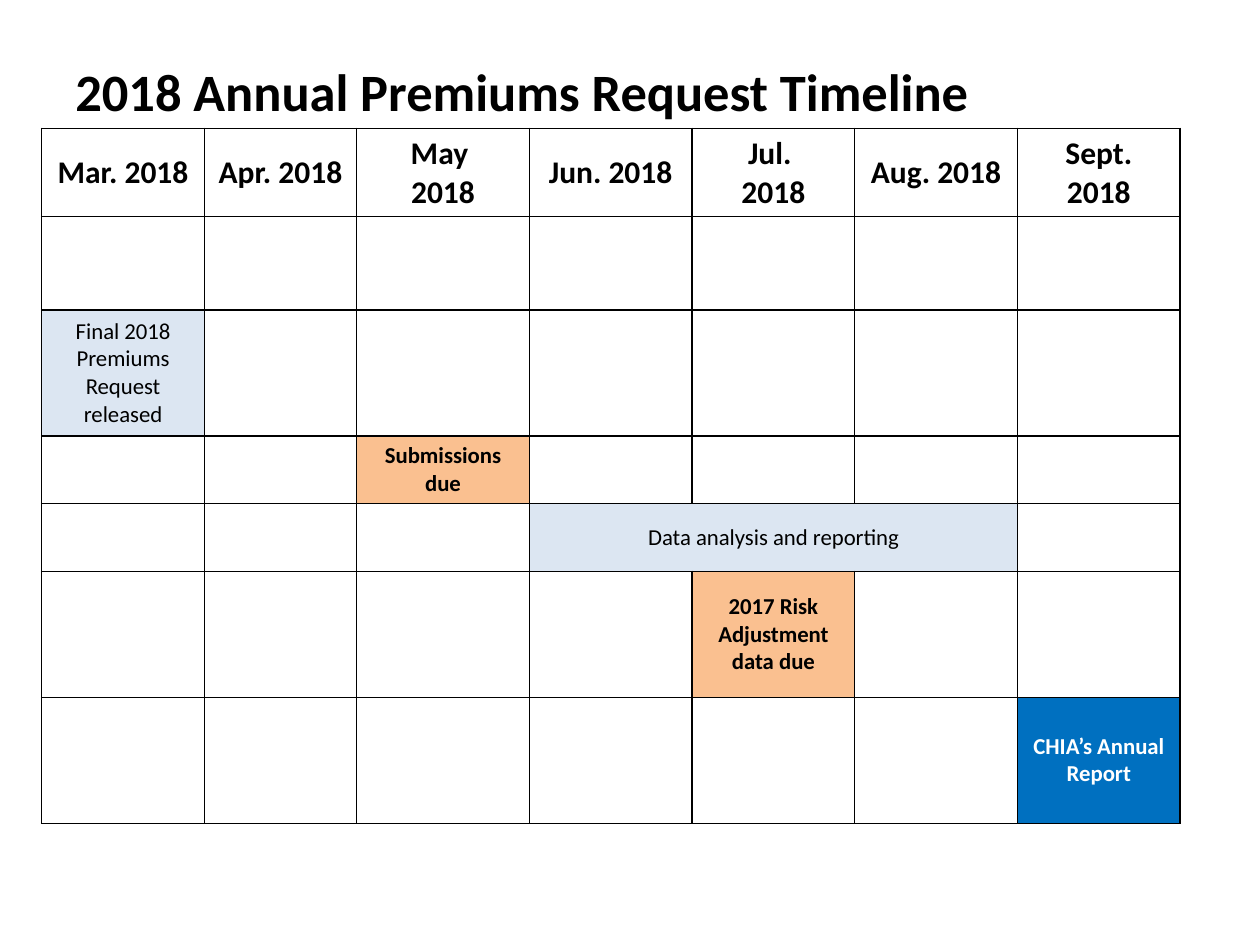
from lxml import etree
from pptx import Presentation
from pptx.dml.color import RGBColor
from pptx.enum.text import MSO_ANCHOR, PP_ALIGN
from pptx.oxml.ns import qn
from pptx.util import Cm, Pt

MIDDLE = MSO_ANCHOR.MIDDLE
CENTER = PP_ALIGN.CENTER

BLACK = RGBColor(0x00, 0x00, 0x00)
WHITE = RGBColor(0xFF, 0xFF, 0xFF)
PALE_BLUE = RGBColor(0xDC, 0xE6, 0xF2)
ORANGE = RGBColor(0xFA, 0xC0, 0x90)
BLUE = RGBColor(0x00, 0x70, 0xC0)
FONT = "Calibri"

COLUMN_WIDTHS = [3.28, 3.07, 3.48, 3.28, 3.28, 3.28, 3.28]
ROW_HEIGHTS = [1.7, 1.88, 2.54, 1.3, 1.37, 2.54, 2.54]
MONTHS = ["Mar. 2018", "Apr. 2018", "May \n2018", "Jun. 2018",
          "Jul. \n2018", "Aug. 2018", "Sept. 2018"]
# row, first column, last column, text, fill, text colour, bold
MILESTONES = [
    (2, 0, 0, "Final 2018 Premiums Request\nreleased", PALE_BLUE, BLACK, False),
    (3, 2, 2, "Submissions due", ORANGE, BLACK, True),
    (4, 3, 5, "Data analysis and reporting", PALE_BLUE, BLACK, False),
    (5, 4, 4, "2017 Risk Adjustment data due", ORANGE, BLACK, True),
    (6, 6, 6, "CHIA’s Annual Report", BLUE, WHITE, True),
]


def format_text(tf, size, color, bold, align=None):
    for p in tf.paragraphs:
        p.alignment = align
        for r in p.runs:
            r.font.name = FONT
            r.font.size = Pt(size)
            r.font.bold = bold
            r.font.color.rgb = color


def add_title(slide, text):
    sp = slide.shapes.add_textbox(Cm(1.27), Cm(1.07), Cm(21.59), Cm(1.55))
    tf = sp.text_frame
    tf.word_wrap = True
    tf.text = text
    format_text(tf, 30, BLACK, True)


def set_borders(cell, color, width):
    tc_pr = cell._tc.get_or_add_tcPr()
    for side in ("lnL", "lnR", "lnT", "lnB"):
        ln = etree.SubElement(tc_pr, qn(f"a:{side}"), w=str(Pt(width)))
        fill = etree.SubElement(ln, qn("a:solidFill"))
        etree.SubElement(fill, qn("a:srgbClr"), val=str(color))


def fill_cell(cell, text, size, color, bold):
    cell.text = text
    cell.vertical_anchor = MIDDLE
    format_text(cell.text_frame, size, color, bold, CENTER)


def add_grid(slide):
    table = slide.shapes.add_table(
        len(ROW_HEIGHTS), len(COLUMN_WIDTHS), Cm(0.84), Cm(2.59),
        Cm(sum(COLUMN_WIDTHS)), Cm(sum(ROW_HEIGHTS))).table
    table.first_row = False
    table.horz_banding = False
    for column, width in zip(table.columns, COLUMN_WIDTHS):
        column.width = Cm(width)
    for row, height in zip(table.rows, ROW_HEIGHTS):
        row.height = Cm(height)
    for cell in table.iter_cells():
        set_borders(cell, BLACK, 1)
        cell.fill.background()
    return table


def main():
    prs = Presentation()
    prs.slide_width, prs.slide_height = Cm(25.4), Cm(19.05)
    slide = prs.slides.add_slide(prs.slide_layouts[6])

    add_title(slide, "2018 Annual Premiums Request Timeline")
    table = add_grid(slide)

    # Month headings
    for col, month in enumerate(MONTHS):
        fill_cell(table.cell(0, col), month, 18, BLACK, True)

    # Milestones
    for row, first, last, text, fill, color, bold in MILESTONES:
        cell = table.cell(row, first)
        if last > first:
            cell.merge(table.cell(row, last))
        fill_cell(cell, text, 13, color, bold)
        cell.fill.solid()
        cell.fill.fore_color.rgb = fill

    prs.save("out.pptx")


if __name__ == "__main__":
    main()
